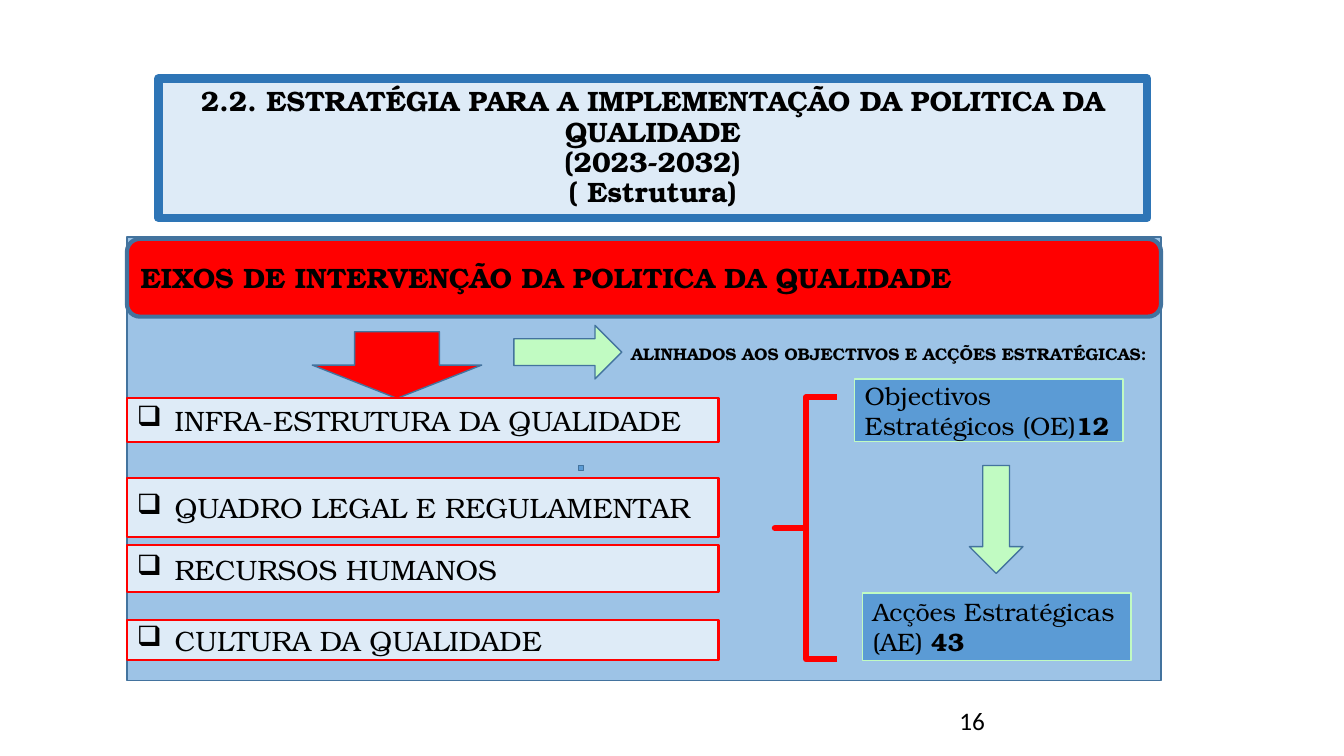
from dataclasses import dataclass
from typing import Optional

from lxml.etree import SubElement
from pptx import Presentation
from pptx.dml.color import RGBColor
from pptx.enum.shapes import MSO_SHAPE as Kind
from pptx.enum.text import MSO_ANCHOR as Anchor, MSO_AUTO_SIZE as Fit, PP_ALIGN as Align
from pptx.oxml.ns import qn
from pptx.util import Cm, Pt

BLACK = RGBColor(0x00, 0x00, 0x00)
RED = RGBColor(0xFF, 0x00, 0x00)
PALE = RGBColor(0xDE, 0xEB, 0xF7)
SKY = RGBColor(0x9D, 0xC3, 0xE6)
BLUE = RGBColor(0x5B, 0x9B, 0xD5)
DEEP = RGBColor(0x2E, 0x75, 0xB6)
STEEL = RGBColor(0x43, 0x73, 0x9E)
MINT = RGBColor(0xC1, 0xFB, 0xC2)
SERIF = "TeX Gyre Bonum"
LEFT, WIDE = 3.2, 26.06


@dataclass
class Block:
    """A shape: place in cm, colours, line in points, text as (words, bold) runs."""
    kind: Kind
    left: float
    top: float
    width: float
    height: float
    fill: Optional[RGBColor]
    line: RGBColor = STEEL
    weight: float = 1
    runs: tuple = ()
    size: float = 20
    bullet: str = ""


def place(shape, left: float, top: float, width: float, height: float) -> None:
    shape.left, shape.top = Cm(left), Cm(top)
    shape.width, shape.height = Cm(width), Cm(height)


def paint(shape, fill: Optional[RGBColor], line: RGBColor, weight: float) -> None:
    if fill is None:
        shape.fill.background()
    else:
        shape.fill.solid()
        shape.fill.fore_color.rgb = fill
    shape.line.color.rgb = line
    shape.line.width = Pt(weight)


def write(shape, runs: tuple, *, size: float, font: str = SERIF, align: Align = Align.LEFT,
          anchor: Anchor = Anchor.MIDDLE, spacing: float = 1.0, bullet: str = "") -> None:
    frame = shape.text_frame
    frame.auto_size = Fit.NONE
    frame.word_wrap = True
    frame.vertical_anchor = anchor
    para = frame.paragraphs[0]
    para.alignment = align
    para.line_spacing = spacing
    para.space_before = Pt(0)
    props = para._p.get_or_add_pPr()
    hang = Cm(0.95) if bullet else 0
    props.set("marL", str(hang))
    props.set("indent", str(-hang))
    if bullet:
        SubElement(props, qn("a:buChar")).set("char", bullet)
    else:
        SubElement(props, qn("a:buNone"))
    for words, bold in runs:
        for num, part in enumerate(words.split("\n")):
            if num:
                para.add_line_break()
            run = para.add_run()
            run.text = part
            run.font.name = font
            run.font.size = Pt(size)
            run.font.bold = bold
            run.font.color.rgb = BLACK


def draw(slide, block: Block):
    shape = slide.shapes.add_shape(block.kind, Cm(block.left), Cm(block.top),
                                   Cm(block.width), Cm(block.height))
    shape.shadow.inherit = False
    paint(shape, block.fill, block.line, block.weight)
    if block.runs:
        write(shape, block.runs, size=block.size, bullet=block.bullet)
    return shape


def axis(top: float, height: float, words: str) -> Block:
    return Block(Kind.RECTANGLE, LEFT, top, 14.91, height, PALE, RED, 1.5,
                 ((words, False),), bullet="❑")


def count(left: float, top: float, height: float, words: str, total: str) -> Block:
    return Block(Kind.RECTANGLE, left, top, 6.76, height, BLUE, MINT, 1,
                 ((words, False), (total, True)), size=18)


BLOCKS = [
    Block(Kind.RECTANGLE, 14.58, 11.73, 0.13, 0.13, BLUE),
    Block(Kind.ROUNDED_RECTANGLE, LEFT, 6.02, WIDE, 1.96, RED, weight=3,
          runs=(("EIXOS DE INTERVENÇÃO DA POLITICA DA QUALIDADE", True),)),
    Block(Kind.DOWN_ARROW, 7.87, 8.36, 4.27, 1.68, RED),
    axis(10.03, 1.12, "INFRA-ESTRUTURA DA QUALIDADE"),
    axis(12.04, 1.5, "QUADRO LEGAL E REGULAMENTAR"),
    axis(13.74, 1.19, "RECURSOS HUMANOS"),
    axis(15.62, 1.02, "CULTURA DA QUALIDADE"),
    count(21.54, 9.55, 1.57, "Objectivos Estratégicos (OE)", "12"),
    count(21.74, 14.94, 1.7, "Acções Estratégicas (AE) ", "43"),
    Block(Kind.RIGHT_ARROW, 12.95, 8.2, 2.72, 1.35, MINT),
    Block(Kind.DOWN_ARROW, 24.43, 11.73, 1.35, 2.72, MINT),
]


def main() -> None:
    deck = Presentation()
    deck.slide_width, deck.slide_height = Cm(33.87), Cm(19.05)
    slide = deck.slides.add_slide(deck.slide_layouts[1])

    # Title
    title = slide.shapes.title
    place(title, 3.99, 1.98, 24.92, 3.51)
    paint(title, PALE, DEEP, 6)
    head = ("2.2. ESTRATÉGIA PARA A IMPLEMENTAÇÃO DA POLITICA DA QUALIDADE\n"
            "(2023-2032)\n( Estrutura)")
    write(title, ((head, True),), size=20, align=Align.CENTER, spacing=0.9)

    # Panel, with its caption beside the green arrow
    panel = slide.placeholders[1]
    place(panel, LEFT, 5.97, WIDE, 11.18)
    paint(panel, SKY, STEEL, 1)
    write(panel, (("ALINHADOS AOS OBJECTIVOS E ACÇÕES ESTRATÉGICAS:", True),),
          size=12, align=Align.RIGHT, anchor=Anchor.TOP)
    panel.text_frame.margin_top = Cm(2.7)
    panel.text_frame.margin_right = Cm(0.35)

    # Axes, arrows and totals
    for block in BLOCKS:
        draw(slide, block)

    # Square bracket: a brace without curves
    brace = draw(slide, Block(Kind.LEFT_BRACE, 19.53, 10.01, 1.57, 6.6, None, RED, 4.5))
    brace.adjustments[0] = 0

    # Page number
    page = slide.shapes.add_textbox(Cm(23.93), Cm(17.65), Cm(7.62), Cm(1.02))
    write(page, (("16", False),), size=18, font="Calibri", anchor=Anchor.TOP)

    deck.save("out.pptx")


if __name__ == "__main__":
    main()
